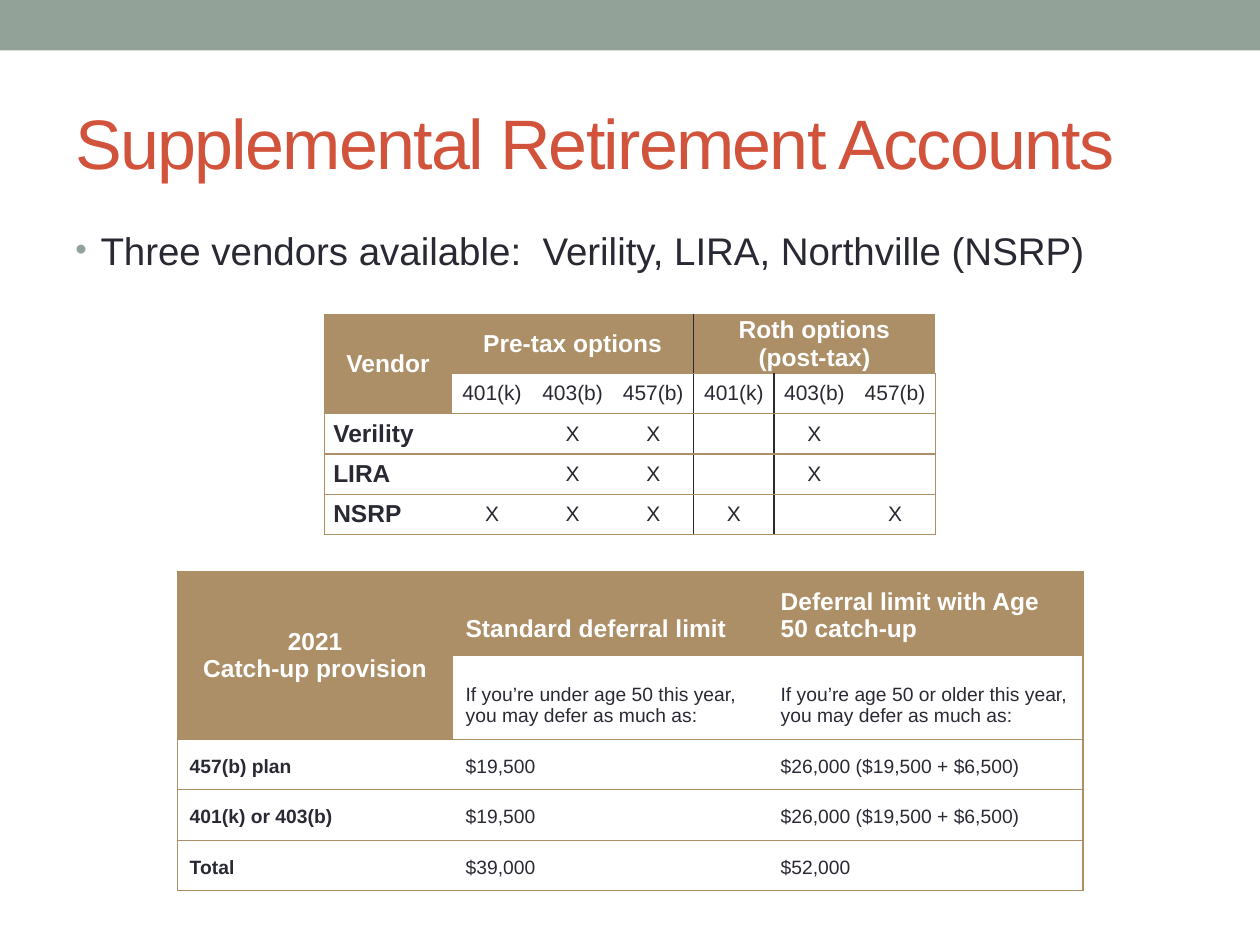
import pptx
import pptx.util
import pptx.dml.color
import pptx.enum.shapes
import pptx.enum.text
import pptx.oxml
from lxml import etree

WIDE, HIGH = 10, 7.5
GOLD, INK, SAGE, RUST, WHITE = "AD8F67", "292934", "93A299", "D2533C", "FFFFFF"
NS = pptx.oxml.ns.nsdecls("a")
ALIGN = pptx.enum.text.PP_ALIGN
ANCHOR = pptx.enum.text.MSO_ANCHOR


def hue(code):
    """Turn a hex string into a colour."""
    return pptx.dml.color.RGBColor.from_string(code)


def place(x, y, w, h):
    """Turn percentages of the slide into left, top, width, height."""
    pairs = zip((x, y, w, h), (WIDE, HIGH, WIDE, HIGH))
    return [pptx.util.Inches(part * full / 100) for part, full in pairs]


def write(para, text, size, color, bold=False):
    """Add one run to a paragraph and return it."""
    run = para.add_run()
    run.text = text
    run.font.name = "Arial"
    run.font.size = pptx.util.Pt(size)
    run.font.bold = bold
    run.font.color.rgb = hue(color)
    return run


def draw_bar(slide, box):
    """Draw the plain band along the top."""
    bar = slide.shapes.add_shape(pptx.enum.shapes.MSO_SHAPE.RECTANGLE, *place(*box))
    bar.shadow.inherit = False
    bar.fill.solid()
    bar.fill.fore_color.rgb = hue(SAGE)
    bar.line.fill.background()


def draw_title(slide, box, text):
    """Move, fill and format the title placeholder."""
    title = slide.shapes.title
    title.left, title.top, title.width, title.height = place(*box)
    frame = title.text_frame
    frame.vertical_anchor = ANCHOR.MIDDLE
    para = frame.paragraphs[0]
    para.alignment = ALIGN.LEFT
    run = write(para, text, 40, RUST)
    run.font._element.set("spc", "-100")


def draw_point(slide, box, text):
    """Place a bulleted line of text."""
    frame = slide.shapes.add_textbox(*place(*box)).text_frame
    frame.word_wrap = True
    para = frame.paragraphs[0]
    para.space_before = pptx.util.Pt(4)
    props = para._p.get_or_add_pPr()
    indent = pptx.util.Inches(0.2)
    props.set("marL", str(indent))
    props.set("indent", str(-indent))
    for xml in (
        f'<a:buClr {NS}><a:srgbClr val="{SAGE}"/></a:buClr>',
        f'<a:buSzPct {NS} val="85000"/>',
        f'<a:buFont {NS} typeface="Arial"/>',
        f'<a:buChar {NS} char="•"/>',
    ):
        props.append(etree.fromstring(xml))
    write(para, text, 22, INK)


def edge(cell, side, line):
    """Set one cell border from a colour and a width, or clear it."""
    width, fill = 0, "<a:noFill/>"
    if line:
        width = pptx.util.Pt(line[1])
        fill = f'<a:solidFill><a:srgbClr val="{line[0]}"/></a:solidFill>'
    xml = f'<a:ln{side} {NS} w="{width}">{fill}</a:ln{side}>'
    cell._tc.get_or_add_tcPr().append(etree.fromstring(xml))


def draw_table(slide, box, cols, rows, data, look):
    """Build a table with a two-row heading from column and row weights."""
    left, top, width, height = place(*box)
    shape = slide.shapes.add_table(len(rows), len(cols), left, top, width, height)
    table = shape.table
    table.horz_banding = False
    for col, part in zip(table.columns, cols):
        col.width = round(width * part / sum(cols))
    for row, part in zip(table.rows, rows):
        row.height = round(height * part / sum(rows))
    rim = (GOLD, 0.75)
    walls = {0: (0, rim), len(cols): (0, rim), **look["walls"]}

    def wall(r, c):
        first, line = walls.get(c, (len(rows), None))
        return line if r >= first else None

    for r, texts in enumerate(data):
        for c, text in enumerate(texts):
            cell = table.cell(r, c)
            head = r == 0 or (r == 1 and c == 0)
            label = c == 0 and not head
            upper = rim if r == 0 or not head else None
            lower = None if head else rim
            for side, line in zip("LRTB", (wall(r, c), wall(r, c + 1), upper, lower)):
                edge(cell, side, line)
            cell.fill.solid()
            cell.fill.fore_color.rgb = hue(GOLD if head else WHITE)
            across, down = (pptx.util.Inches(gap) for gap in look["inset"])
            cell.margin_left = cell.margin_right = across
            cell.margin_top = cell.margin_bottom = down
            corner = head and c == 0
            cell.vertical_anchor = ANCHOR.MIDDLE if corner else look["anchor"]
            size = 14 if head else look["label"] if label else look["size"]
            frame = cell.text_frame
            for n, part in enumerate(text.split("\n") if text else []):
                para = frame.add_paragraph() if n else frame.paragraphs[0]
                center = corner or (look["center"] and not label)
                para.alignment = ALIGN.CENTER if center else ALIGN.LEFT
                write(para, part, size, WHITE if head else INK, head or label)
    for first, last in look["spans"]:
        table.cell(*first).merge(table.cell(*last))


def draw_slide(deck):
    """Compose the retirement accounts slide."""
    slide = deck.slides.add_slide(deck.slide_layouts[5])
    draw_bar(slide, (0, 0, 100, 5.33))
    draw_title(slide, (5, 7.73, 90, 14.4), "Supplemental Retirement Accounts")
    draw_point(slide, (5, 23.33, 90, 8),
               "Three vendors available:  Verility, LIRA, Northville (NSRP)")
    plans = ["401(k)", "403(b)", "457(b)"]
    vendors = [
        ["Vendor", "Pre-tax options", "", "", "Roth options (post-tax)", "", ""],
        [""] + plans * 2,
        ["Verility", "", "X", "X", "", "X", ""],
        ["LIRA", "", "X", "X", "", "X", ""],
        ["NSRP", "X", "X", "X", "X", "", "X"],
    ]
    draw_table(slide, (25.75, 33.28, 48.5, 22.93), [1.01] + [0.64] * 6,
               [0.44] + [0.32] * 4, vendors, {
                   "walls": {4: (0, (INK, 0.75)), 5: (1, (INK, 1))},
                   "inset": (0.07, 0), "anchor": ANCHOR.MIDDLE, "center": True,
                   "label": 14, "size": 12,
                   "spans": [((0, 0), (1, 0)), ((0, 1), (0, 3)), ((0, 4), (0, 6))]})
    limits = [
        ["2021\nCatch-up provision", "Standard deferral limit",
         "Deferral limit with Age 50 catch-up"],
        ["", "If you’re under age 50 this year, you may defer as much as:",
         "If you’re age 50 or older this year, you may defer as much as:"],
        ["457(b) plan", "$19,500", "$26,000 ($19,500 + $6,500)"],
        ["401(k) or 403(b)", "$19,500", "$26,000 ($19,500 + $6,500)"],
        ["Total", "$39,000", "$52,000"],
    ]
    draw_table(slide, (14.06, 60.44, 71.9, 33.45), [2.19, 2.5, 2.5],
               [0.67, 0.64] + [0.4] * 3, limits, {
                   "walls": {}, "inset": (0.1, 0.1), "anchor": ANCHOR.BOTTOM,
                   "center": False, "label": 11, "size": 11,
                   "spans": [((0, 0), (1, 0))]})


def main():
    """Build and save the deck."""
    deck = pptx.Presentation()
    deck.slide_width = pptx.util.Inches(WIDE)
    deck.slide_height = pptx.util.Inches(HIGH)
    draw_slide(deck)
    deck.save("out.pptx")


if __name__ == "__main__":
    main()
